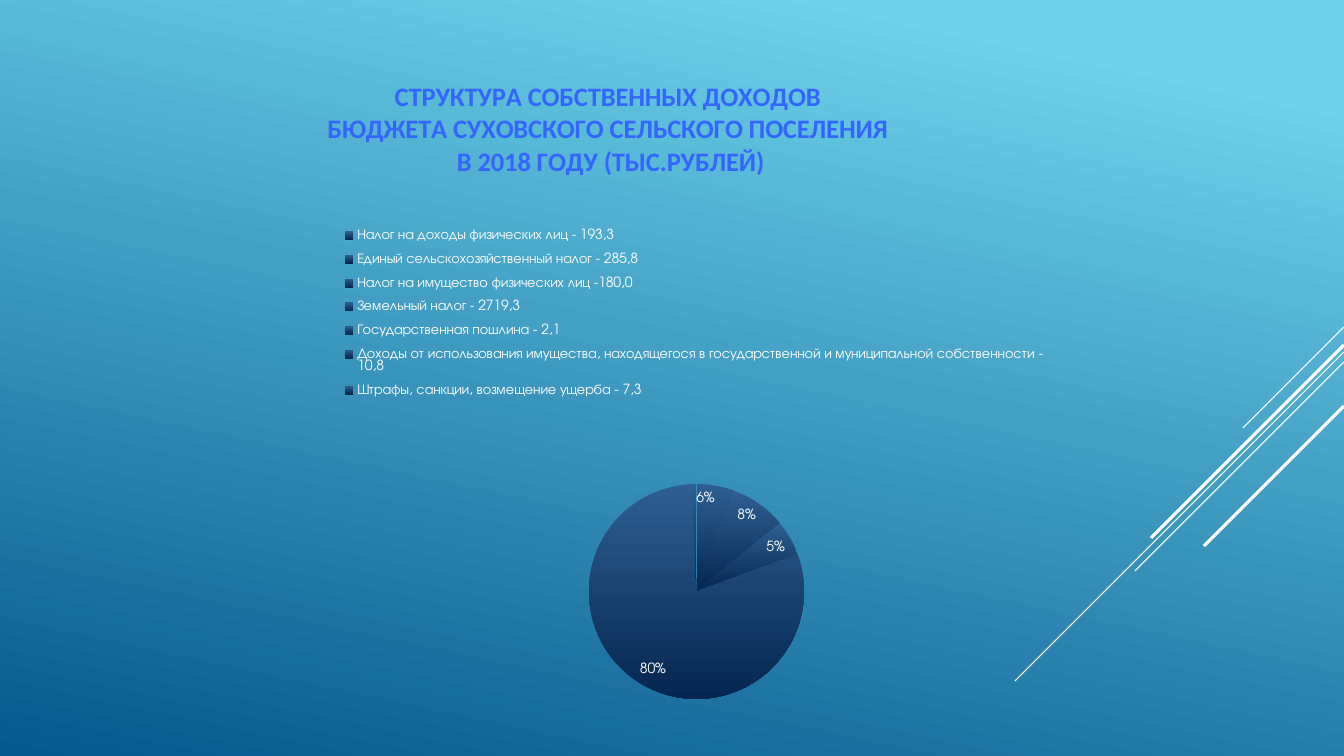
from lxml.etree import SubElement
from pptx import Presentation
from pptx.chart.data import CategoryChartData
from pptx.dml.color import RGBColor
from pptx.enum.chart import XL_CHART_TYPE, XL_LABEL_POSITION, XL_LEGEND_POSITION
from pptx.enum.shapes import MSO_CONNECTOR
from pptx.enum.text import PP_ALIGN
from pptx.oxml import parse_xml
from pptx.oxml.ns import nsdecls, qn
from pptx.util import Pt

PX = 914400 / 100.8
FONT = "TeX Gyre Adventor"
WHITE = RGBColor.from_string("FFFFFF")
LEFT, TOP, WIDE, HIGH = 214, 53, 968, 680


def shade(fill, angle, stops):
    fill.gradient()
    fill.gradient_angle = angle
    for stop, (pos, color) in zip(fill.gradient_stops, stops):
        stop.position = pos
        stop.color.rgb = RGBColor.from_string(color)


def place(part, index, x, y, w=0, h=0, inner=False):
    for old in part.findall(qn("c:layout")):
        part.remove(old)
    tags = '<c:layoutTarget val="inner"/>' if inner else ""
    tags += '<c:xMode val="edge"/><c:yMode val="edge"/>'
    sizes = {"x": (x - LEFT) / WIDE, "y": (y - TOP) / HIGH}
    if w:
        sizes.update(w=w / WIDE, h=h / HIGH)
    tags += "".join(f'<c:{key} val="{val:.3f}"/>' for key, val in sizes.items())
    part.insert(index, parse_xml(
        f'<c:layout {nsdecls("c")}><c:manualLayout>{tags}</c:manualLayout></c:layout>'))


deck = Presentation()
deck.slide_width = round(1344 * PX)
deck.slide_height = round(756 * PX)
slide = deck.slides.add_slide(deck.slide_layouts[6])
shade(slide.background.fill, 258, [(0.1, "6ED2EB"), (1, "06588E")])

for top, run, width in [(327, 101, 0.75), (352, 329, 0.75), (362, 209, 0.75),
                        (345, 193, 2.25), (406, 140, 2.25)]:
    ends = [round(n * PX) for n in (1344, top, 1344 - run, top + run)]
    line = slide.shapes.add_connector(MSO_CONNECTOR.STRAIGHT, *ends)
    line.line.color.rgb = WHITE
    line.line.width = Pt(width)
    SubElement(line._element.spPr, qn("a:effectLst"))

taxes = [
    ("Налог на доходы физических лиц - 193,3", 193.3),
    ("Единый сельскохозяйственный налог - 285,8", 285.8),
    ("Налог на имущество физических лиц -180,0", 180.0),
    ("Земельный налог - 2719,3", 2719.3),
    ("Государственная пошлина - 2,1", 2.1),
    ("Доходы от использования имущества, находящегося в государственной "
     "и муниципальной собственности - 10,8", 10.8),
    ("Штрафы, санкции, возмещение ущерба - 7,3", 7.3),
]
total = sum(sum_ for name, sum_ in taxes)
data = CategoryChartData()
data.categories = [name for name, sum_ in taxes]
data.add_series("Series 1", [round(100 * sum_ / total, 1) for name, sum_ in taxes])
frame = slide.shapes.add_chart(
    XL_CHART_TYPE.PIE, *[round(n * PX) for n in (LEFT, TOP, WIDE, HIGH)], data)
chart = frame.chart
chart.font.name = FONT
chart.font.size = Pt(10)
chart.font.color.rgb = WHITE

title = chart.chart_title
title.include_in_layout = False
title.text_frame.text = ("СТРУКТУРА СОБСТВЕННЫХ ДОХОДОВ \n"
                         "БЮДЖЕТА СУХОВСКОГО СЕЛЬСКОГО ПОСЕЛЕНИЯ \n"
                         "В 2018 ГОДУ (ТЫС.РУБЛЕЙ)")
for para in title.text_frame.paragraphs:
    para.alignment = PP_ALIGN.CENTER
    for run in para.runs:
        run.font.name = "Calibri"
        run.font.size = Pt(19)
        run.font.bold = True
        run.font.color.rgb = RGBColor.from_string("3366FF")
place(title._element, 1, 324, 76)

chart.has_legend = True
legend = chart.legend
legend.position = XL_LEGEND_POSITION.TOP
legend.include_in_layout = False
legend.font.name = FONT
legend.font.size = Pt(10)
legend.font.color.rgb = WHITE
place(legend._element, 1, 338, 218, 712, 190)

plot = chart.plots[0]
plot.vary_by_categories = True
place(chart._chartSpace.chart.plotArea, 0, 526, 484, 342, 215, True)
pie = plot.series[0]
labels = pie.data_labels
labels.show_percentage = True
labels.show_value = False
labels.number_format = "0%"
labels.number_format_is_linked = False
labels.position = XL_LABEL_POSITION.INSIDE_END
labels.font.name = FONT
labels.font.size = Pt(10)
labels.font.color.rgb = WHITE
for i in range(len(taxes)):
    look = pie.points[i].format
    shade(look.fill, 270, [(0, "2F5F92"), (1, "052650")])
    look.line.fill.background()
for i in (6, 5, 4):
    labels._element.insert(0, parse_xml(
        f'<c:dLbl {nsdecls("c")}><c:idx val="{i}"/><c:delete val="1"/></c:dLbl>'))

deck.save("out.pptx")
